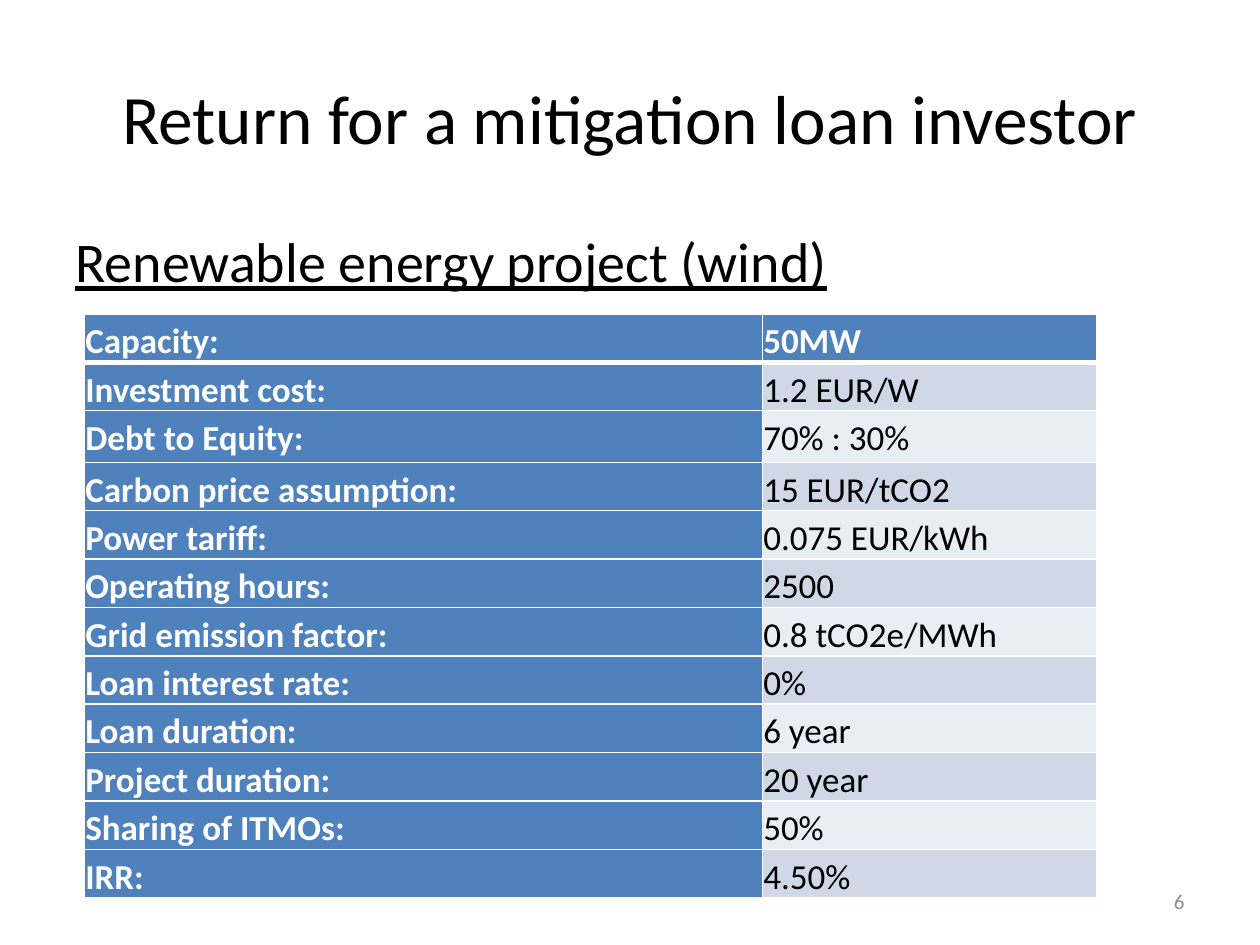
from lxml import etree
from pptx import Presentation
from pptx.dml.color import RGBColor
from pptx.enum.text import MSO_ANCHOR, PP_ALIGN
from pptx.oxml.ns import qn
from pptx.util import Cm, Pt

LEFT, CENTER, RIGHT, JUSTIFY = PP_ALIGN.LEFT, PP_ALIGN.CENTER, PP_ALIGN.RIGHT, PP_ALIGN.JUSTIFY
TOP, MIDDLE = MSO_ANCHOR.TOP, MSO_ANCHOR.MIDDLE

FONT = "Calibri"
COLORS = {
    "text": "000000",
    "white": "FFFFFF",
    "number": "8C8C8C",
    "header": "4F81BD",
    "band_dark": "D0D8E8",
    "band_light": "E9EDF4",
}
ASSUMPTIONS = [
    ("Capacity:", "50MW"),
    ("Investment cost:", "1.2 EUR/W"),
    ("Debt to Equity:", "70% : 30%"),
    ("Carbon price assumption:", "15 EUR/tCO2"),
    ("Power tariff:", "0.075 EUR/kWh"),
    ("Operating hours:", "2500"),
    ("Grid emission factor:", "0.8 tCO2e/MWh"),
    ("Loan interest rate:", "0%"),
    ("Loan duration:", "6 year"),
    ("Project duration:", "20 year"),
    ("Sharing of ITMOs:", "50%"),
    ("IRR:", "4.50%"),
]
LABEL_SHARE = 0.67
ROW_HEIGHT = Cm(0.86)
TALL_ROW, TALL_HEIGHT = 2, Cm(1.04)


def rgb(name):
    return RGBColor.from_string(COLORS[name])


def write_text(frame, text, size, color="text", align=LEFT, bold=False,
               underline=False, line_spacing=None):
    para = frame.paragraphs[0]
    para.alignment = align
    para.line_spacing = line_spacing
    span = para.add_run()
    span.text = text
    span.font.name = FONT
    span.font.size = Pt(size)
    span.font.bold = bold
    span.font.underline = underline
    span.font.color.rgb = rgb(color)


def add_text(page, box, text, size, anchor=TOP, **style):
    frame = page.shapes.add_textbox(*box).text_frame
    frame.word_wrap = True
    frame.vertical_anchor = anchor
    write_text(frame, text, size, **style)


def set_borders(cell, widths):
    properties = cell._tc.get_or_add_tcPr()
    for index, (side, width) in enumerate(widths.items()):
        line = etree.Element(qn(f"a:ln{side}"), w=str(Pt(width)))
        fill = etree.SubElement(line, qn("a:solidFill"))
        etree.SubElement(fill, qn("a:srgbClr"), val=COLORS["white"])
        properties.insert(index, line)


def fill_cell(cell, text, row, column):
    is_header = row == 0 or column == 0
    band = "band_dark" if row % 2 else "band_light"
    cell.fill.solid()
    cell.fill.fore_color.rgb = rgb("header" if is_header else band)
    cell.margin_left = cell.margin_right = Cm(0.02)
    cell.margin_top = cell.margin_bottom = 0
    write_text(cell.text_frame, text, 20, color="white" if is_header else "text",
               align=JUSTIFY, bold=is_header, line_spacing=1.15)
    set_borders(cell, {"L": 1, "R": 1, "T": 3 if row == 1 else 1, "B": 3 if row == 0 else 1})


def add_assumptions(page, box):
    left, top, width, height = box
    table = page.shapes.add_table(len(ASSUMPTIONS), 2, left, top, width, height).table
    table.columns[0].width = int(width * LABEL_SHARE)
    table.columns[1].width = width - table.columns[0].width
    for row, texts in enumerate(ASSUMPTIONS):
        table.rows[row].height = TALL_HEIGHT if row == TALL_ROW else ROW_HEIGHT
        for column, text in enumerate(texts):
            fill_cell(table.cell(row, column), text, row, column)


def build_loan_page(page, box):
    left, top, width, height = box
    margin = Cm(1.27)
    inner = width - 2 * margin
    add_text(page, (left + margin, top + Cm(0.76), inner, Cm(3.18)),
             "Return for a mitigation loan investor", 39.6, anchor=MIDDLE, align=CENTER)
    add_text(page, (left + margin, top + Cm(4.45), inner, Cm(13.2)),
             "Renewable energy project (wind)", 32, underline=True)
    number_width = Cm(5.93)
    add_text(page, (left + width - margin - number_width, top + height - Cm(1.4),
                    number_width, Cm(1.03)),
             "6", 12, anchor=MIDDLE, color="number", align=RIGHT)
    add_assumptions(page, (left + Cm(1.7), top + Cm(6.33), Cm(20.4), Cm(11.7)))


def main():
    deck = Presentation()
    deck.slide_width, deck.slide_height = Cm(25.4), Cm(19.05)
    page = deck.slides.add_slide(deck.slide_layouts[6])
    build_loan_page(page, (0, 0, deck.slide_width, deck.slide_height))
    deck.save("out.pptx")


if __name__ == "__main__":
    main()
